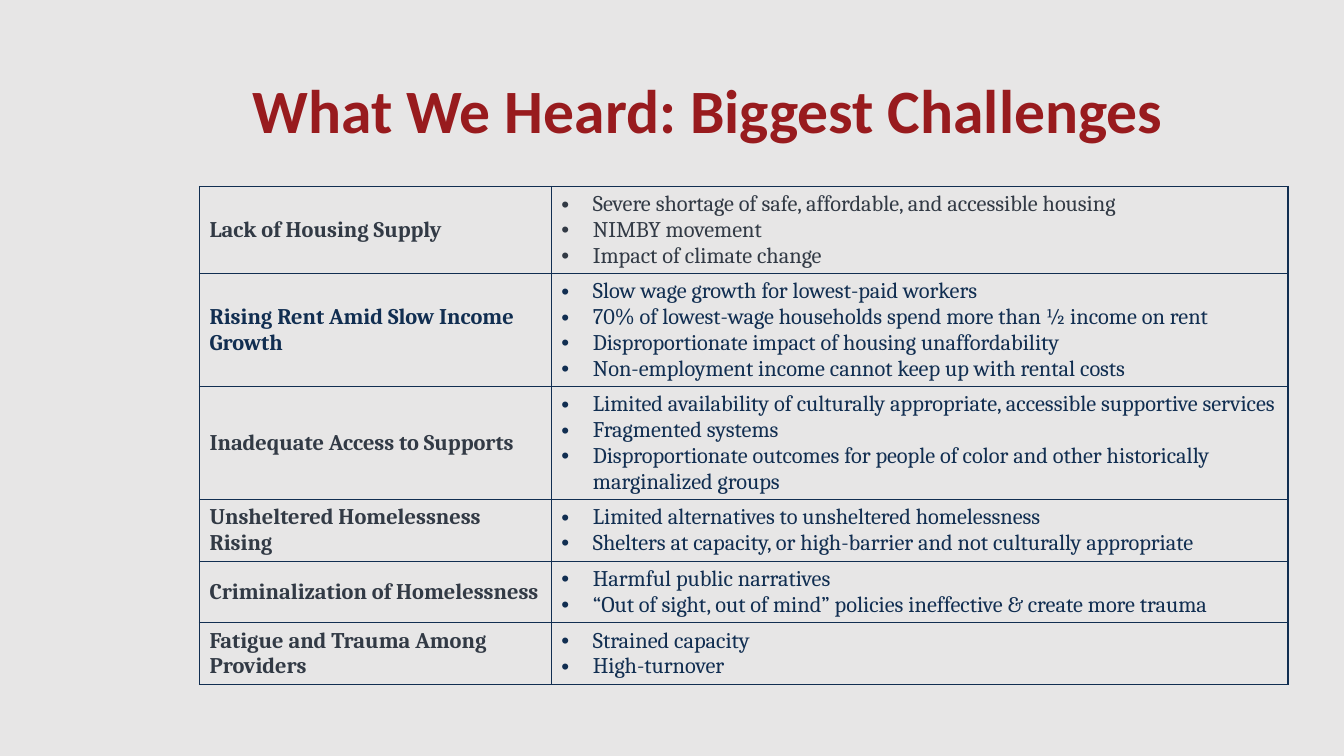
"""Build the slide on the biggest challenges heard, as a two-column table."""
from lxml import etree
from pptx import Presentation
from pptx.dml.color import RGBColor
from pptx.enum import text
from pptx.oxml import ns
from pptx.util import Pt

COLORS = {"page": "E7E6E6", "title": "981B1E", "navy": "112E51", "slate": "323A45"}
CHALLENGES = [
    ("Lack of Housing Supply", "slate", "slate", [
        "Severe shortage of safe, affordable, and accessible housing",
        "NIMBY movement",
        "Impact of climate change"]),
    ("Rising Rent Amid Slow Income Growth", "navy", "navy", [
        "Slow wage growth for lowest-paid workers",
        "70% of lowest-wage households spend more than ½ income on rent",
        "Disproportionate impact of housing unaffordability",
        "Non-employment income cannot keep up with rental costs"]),
    ("Inadequate Access to Supports", "slate", "navy", [
        "Limited availability of culturally appropriate, accessible supportive services",
        "Fragmented systems",
        "Disproportionate outcomes for people of color and other historically marginalized groups"]),
    ("Unsheltered Homelessness Rising", "slate", "navy", [
        "Limited alternatives to unsheltered homelessness",
        "Shelters at capacity, or high-barrier and not culturally appropriate"]),
    ("Criminalization of Homelessness", "slate", "navy", [
        "Harmful public narratives",
        "“Out of sight, out of mind” policies ineffective & create more trauma"]),
    ("Fatigue and Trauma Among Providers", "slate", "navy", [
        "Strained capacity",
        "High-turnover"]),
]


def style(para, font, size, color, bold):
    """Format every run of a paragraph."""
    for span in para.runs:
        span.font.name = font
        span.font.size = Pt(size)
        span.font.bold = bold
        span.font.color.rgb = RGBColor.from_string(COLORS[color])


def child(parent, tag, **attributes):
    """Append a drawing element to a parent element."""
    return etree.SubElement(parent, ns.qn(tag), attributes)


deck = Presentation()
deck.slide_width, deck.slide_height = Pt(960), Pt(540)
page = deck.slides.add_slide(deck.slide_layouts[5])
page.background.fill.solid()
page.background.fill.fore_color.rgb = RGBColor.from_string(COLORS["page"])

title = page.shapes.title
title.left, title.top, title.width, title.height = Pt(113.8), Pt(28.8), Pt(784), Pt(104.4)
title.text_frame.text = "What We Heard: Biggest Challenges"
title.text_frame.vertical_anchor = text.MSO_ANCHOR.MIDDLE
heading = title.text_frame.paragraphs[0]
heading.alignment = text.PP_ALIGN.CENTER
heading.line_spacing = 0.9
style(heading, "Calibri", 44, "title", True)

frame = page.shapes.add_table(len(CHALLENGES), 2, Pt(142.5), Pt(133.2), Pt(777.6), Pt(388.8))
table = frame.table
table.first_row = table.horz_banding = False
table.columns[0].width, table.columns[1].width = Pt(251.3), Pt(526.3)
for row in table.rows:
    row.height = Pt(29.5)
table.rows[0].height = Pt(21.6)
frame.height = Pt(388.8)

for row, (challenge, label_color, point_color, points) in zip(table.rows, CHALLENGES):
    label, details = row.cells
    label.text_frame.text = challenge
    label.vertical_anchor = text.MSO_ANCHOR.MIDDLE
    style(label.text_frame.paragraphs[0], "Cambria", 16, label_color, True)

    details.text_frame.text = "\n".join(points)
    for para in details.text_frame.paragraphs:
        props = para._p.get_or_add_pPr()
        props.set("marL", str(Pt(22.5)))
        props.set("indent", str(-Pt(22.5)))
        child(props, "a:buFont", typeface="Arial")
        child(props, "a:buChar", char="•")
        style(para, "Cambria", 16, point_color, False)

    for cell in row.cells:
        cell_props = cell._tc.get_or_add_tcPr()
        for edge in ("a:lnL", "a:lnR", "a:lnT", "a:lnB"):
            line = child(cell_props, edge, w=str(Pt(1)))
            child(child(line, "a:solidFill"), "a:srgbClr", val=COLORS["navy"])
    label.fill.background()
    details.fill.solid()
    details.fill.fore_color.rgb = RGBColor.from_string(COLORS["page"])
    tint = details._tc.tcPr.find(ns.qn("a:solidFill")).find(ns.qn("a:srgbClr"))
    child(tint, "a:alpha", val="90000")

deck.save("out.pptx")
